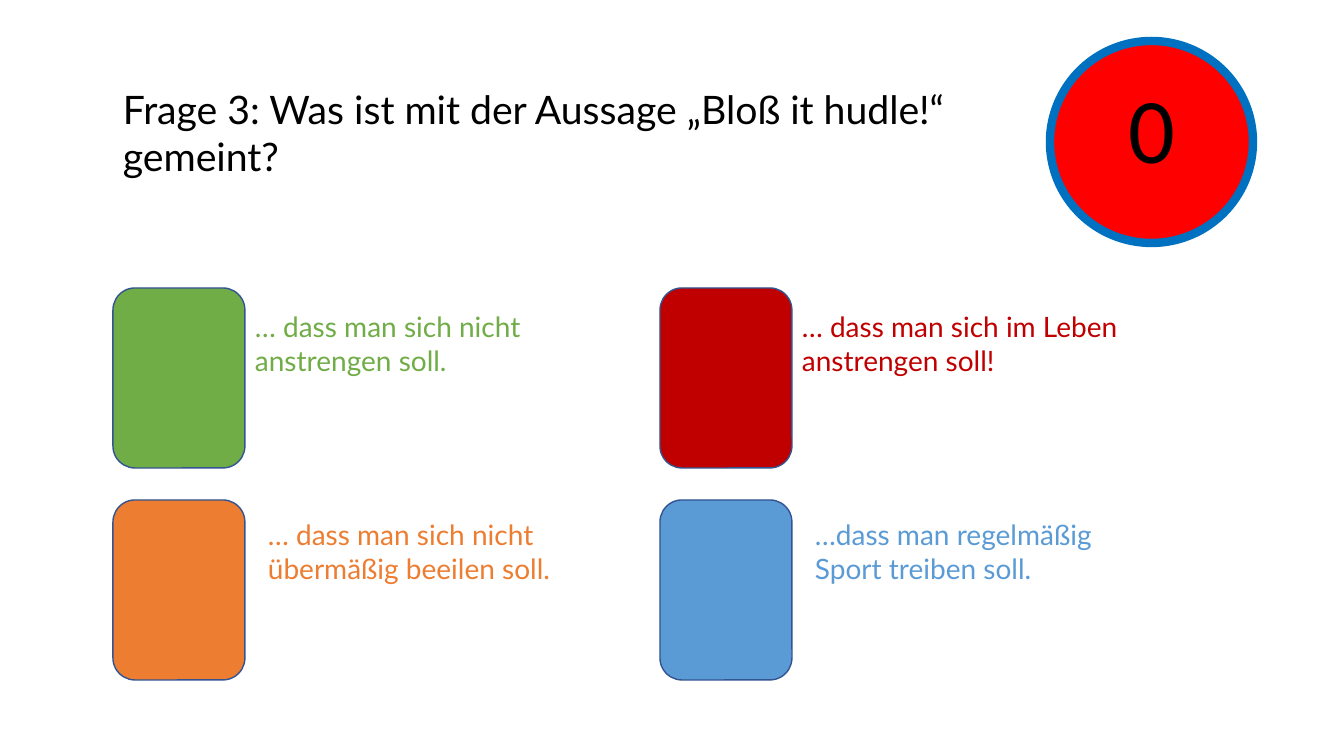
from dataclasses import dataclass

from pptx import Presentation
from pptx import util as u
from pptx.dml.color import RGBColor
from pptx.enum import shapes, text

QUESTION = ["Frage 3: Was ist mit der Aussage „Bloß it hudle!“", "gemeint?"]
SCORE = "0"
ANSWERS = [
    [("… dass man sich nicht anstrengen soll.", "70AD47", 360),
     ("… dass man sich im Leben anstrengen soll!", "C00000", 372)],
    [("… dass man sich nicht übermäßig beeilen soll.", "ED7D31", 313),
     ("…dass man regelmäßig Sport treiben soll.", "5B9BD5", 358)],
]


@dataclass(frozen=True)
class Theme:
    font: str = "Lato"
    score_font: str = "Calibri"
    ink: str = "000000"
    card_line: str = "325491"
    score_fill: str = "FF0000"
    score_line: str = "0070C0"
    question_size: int = 28
    answer_size: int = 20
    score_size: int = 66


THEME = Theme()
PX = 914400 / 100.8
LEFT, TOP = 113, 288
CARD_W, CARD_H = 132, 180
COL_STEP, ROW_STEP = 547, 212
TEXT_OFFSETS = [(132, 17), (145, 13)]


def px(n):
    return u.Emu(round(n * PX))


def box(*lengths):
    return [px(n) for n in lengths]


def add_run(p, words, font, size, color):
    r = p.add_run()
    r.text = words
    r.font.name = font
    r.font.size = u.Pt(size)
    r.font.color.rgb = RGBColor.from_string(color)


def add_text(s, place, lines, size, color):
    tf = s.shapes.add_textbox(*box(*place)).text_frame
    tf.word_wrap = True
    tf.auto_size = text.MSO_AUTO_SIZE.SHAPE_TO_FIT_TEXT
    for i, line in enumerate(lines):
        p = tf.add_paragraph() if i else tf.paragraphs[0]
        add_run(p, line, THEME.font, size, color)


def add_shape(s, kind, place, fill, line, width):
    sp = s.shapes.add_shape(kind, *box(*place))
    sp.shadow.inherit = False
    sp.fill.solid()
    sp.fill.fore_color.rgb = RGBColor.from_string(fill)
    sp.line.color.rgb = RGBColor.from_string(line)
    sp.line.width = u.Pt(width)
    return sp


def add_answers(s):
    for row, answers in enumerate(ANSWERS):
        dx, dy = TEXT_OFFSETS[row]
        for col, (words, color, width) in enumerate(answers):
            x, y = LEFT + col * COL_STEP, TOP + row * ROW_STEP
            add_shape(s, shapes.MSO_SHAPE.ROUNDED_RECTANGLE,
                      (x, y, CARD_W, CARD_H), color, THEME.card_line, 1)
            add_text(s, (x + dx, y + dy, width, 78), [words],
                     THEME.answer_size, color)


def add_score(s):
    sp = add_shape(s, shapes.MSO_SHAPE.OVAL, (1050, 41, 203, 202),
                   THEME.score_fill, THEME.score_line, 6)
    tf = sp.text_frame
    tf.vertical_anchor = text.MSO_ANCHOR.MIDDLE
    tf.margin_top, tf.margin_bottom = px(0), px(31)
    p = tf.paragraphs[0]
    p.alignment = text.PP_ALIGN.CENTER
    add_run(p, SCORE, THEME.score_font, THEME.score_size, THEME.ink)


def main():
    prs = Presentation()
    prs.slide_width, prs.slide_height = box(1344, 756)
    s = prs.slides.add_slide(prs.slide_layouts[6])
    add_text(s, (LEFT, 80, 1134, 105), QUESTION, THEME.question_size, THEME.ink)
    add_answers(s)
    add_score(s)
    prs.save("out.pptx")


if __name__ == "__main__":
    main()
